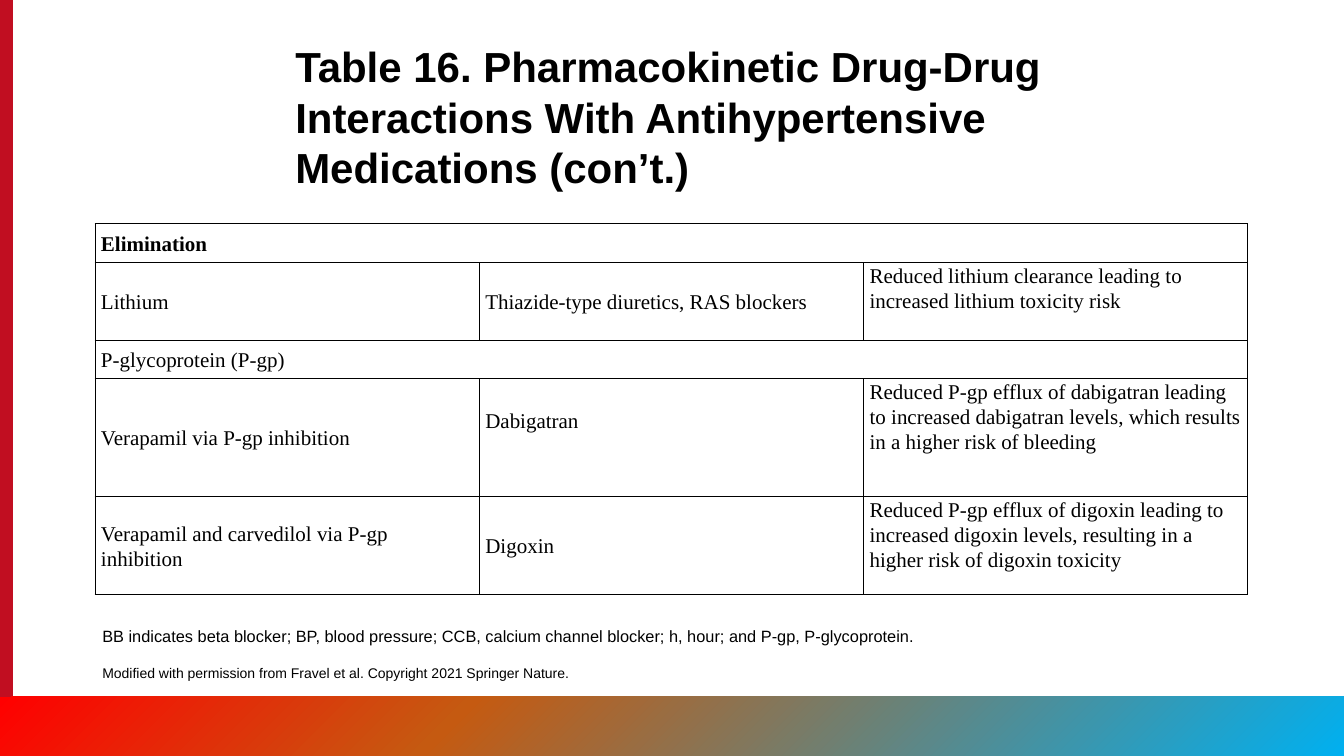
from lxml import etree
from pptx import Presentation
from pptx.dml.color import RGBColor
from pptx.enum.shapes import MSO_SHAPE
from pptx.enum.text import MSO_ANCHOR
from pptx.oxml import parse_xml
from pptx.oxml.ns import nsdecls, qn
from pptx.util import Emu, Pt

RECTANGLE = MSO_SHAPE.RECTANGLE
TOP, MIDDLE, BOTTOM = MSO_ANCHOR.TOP, MSO_ANCHOR.MIDDLE, MSO_ANCHOR.BOTTOM
EMU_PER_PX = 914400 / 84
SANS, SERIF = "Arial", "Times New Roman"
BLACK = "000000"
BORDER_SIDES = ("a:lnL", "a:lnR", "a:lnT", "a:lnB")

ROW_HEIGHTS = (39, 78, 38, 118, 98)
# A row with one entry spans the whole table.
INTERACTIONS = (
    ("Elimination",),
    ("Lithium", "Thiazide-type diuretics, RAS blockers",
     "Reduced lithium clearance leading to increased lithium toxicity risk"),
    ("P-glycoprotein (P-gp)",),
    ("Verapamil via P-gp inhibition", "Dabigatran",
     "Reduced P-gp efflux of dabigatran leading to increased dabigatran "
     "levels, which results in a higher risk of bleeding"),
    ("Verapamil and carvedilol via P-gp inhibition", "Digoxin",
     "Reduced P-gp efflux of digoxin leading to increased digoxin levels, "
     "resulting in a higher risk of digoxin toxicity"),
)


def px(length):
    return Emu(round(length * EMU_PER_PX))


def color(value):
    return RGBColor.from_string(value)


def add_span(para, text, size, font, bold=False):
    span = para.add_run()
    span.text = text
    span.font.size = Pt(size)
    span.font.name = font
    span.font.bold = bold
    span.font.color.rgb = color(BLACK)


def add_text_box(page, box, anchor):
    frame = page.shapes.add_textbox(*map(px, box)).text_frame
    frame.word_wrap = True
    frame.vertical_anchor = anchor
    return frame


def add_bar(page, box, fill):
    bar = page.shapes.add_shape(RECTANGLE, *map(px, box))
    bar.shadow.inherit = False
    bar.line.fill.background()
    bar.fill.solid()
    bar.fill.fore_color.rgb = color(fill)
    return bar


def add_frame(page, width, height):
    # Red edge on the left, gradient band along the bottom
    add_bar(page, (0, 0, 13, height), "C10E21")
    band = add_bar(page, (0, height - 59, width, 59), "FF0000")
    stops = "".join(
        f'<a:gs pos="{percent * 1000}"><a:srgbClr val="{value}"/></a:gs>'
        for percent, value in ((0, "FF0000"), (34, "C55A11"), (100, "00B0F0")))
    gradient = parse_xml(
        f'<a:gradFill {nsdecls("a")} rotWithShape="1"><a:gsLst>{stops}</a:gsLst>'
        '<a:lin ang="2700000" scaled="0"/></a:gradFill>')
    solid = band.element.spPr.find(qn("a:solidFill"))
    solid.getparent().replace(solid, gradient)


def add_title(page, box):
    para = add_text_box(page, box, BOTTOM).paragraphs[0]
    add_span(para, "Table 16. Pharmacokinetic Drug-Drug Interactions With "
             "Antihypertensive Medications (con’t.)", 36, SANS, bold=True)


def style_cell(cell):
    cell.margin_left = cell.margin_right = px(6)
    cell.margin_top = cell.margin_bottom = 0
    properties = cell._tc.get_or_add_tcPr()
    for side in BORDER_SIDES:
        line = etree.SubElement(properties, qn(side), w=str(Pt(1)))
        fill = etree.SubElement(line, qn("a:solidFill"))
        etree.SubElement(fill, qn("a:srgbClr"), val=BLACK)
    cell.fill.background()


def add_interactions(page, box):
    left, top, width, height = box
    table = page.shapes.add_table(
        len(INTERACTIONS), 3, px(left), px(top), px(width), px(height)).table
    table.first_row = table.horz_banding = False
    for row, row_height in zip(table.rows, ROW_HEIGHTS):
        row.height = px(row_height)
    for cell in table.iter_cells():
        style_cell(cell)

    for r, entries in enumerate(INTERACTIONS):
        if len(entries) == 1:
            table.cell(r, 0).merge(table.cell(r, 2))
        for c, text in enumerate(entries):
            cell = table.cell(r, c)
            cell.vertical_anchor = TOP if c == 2 else MIDDLE
            para = cell.text_frame.paragraphs[0]
            para.line_spacing = 1.07
            para.space_after = Pt(8)
            add_span(para, text, 18, SERIF, bold=r == 0)
    # Dabigatran sits above the middle of its cell
    table.cell(3, 1).margin_bottom = px(34)


def add_notes(page, box):
    frame = add_text_box(page, box, TOP)
    add_span(frame.paragraphs[0], "BB indicates beta blocker; BP, blood pressure; "
             "CCB, calcium channel blocker; h, hour; and P-gp, P-glycoprotein.",
             14, SANS)
    credit = frame.add_paragraph()
    credit.space_before = Pt(16)
    add_span(credit, "Modified with permission from Fravel et al. "
             "Copyright 2021 Springer Nature.", 12, SANS)


def main():
    deck = Presentation()
    deck.slide_width, deck.slide_height = px(1344), px(756)
    page = deck.slides.add_slide(deck.slide_layouts[6])
    add_frame(page, 1344, 756)
    add_title(page, (287, 35, 770, 161))
    add_interactions(page, (95, 224, 1153, sum(ROW_HEIGHTS)))
    add_notes(page, (94, 622, 910, 65))
    deck.save("out.pptx")


if __name__ == "__main__":
    main()
